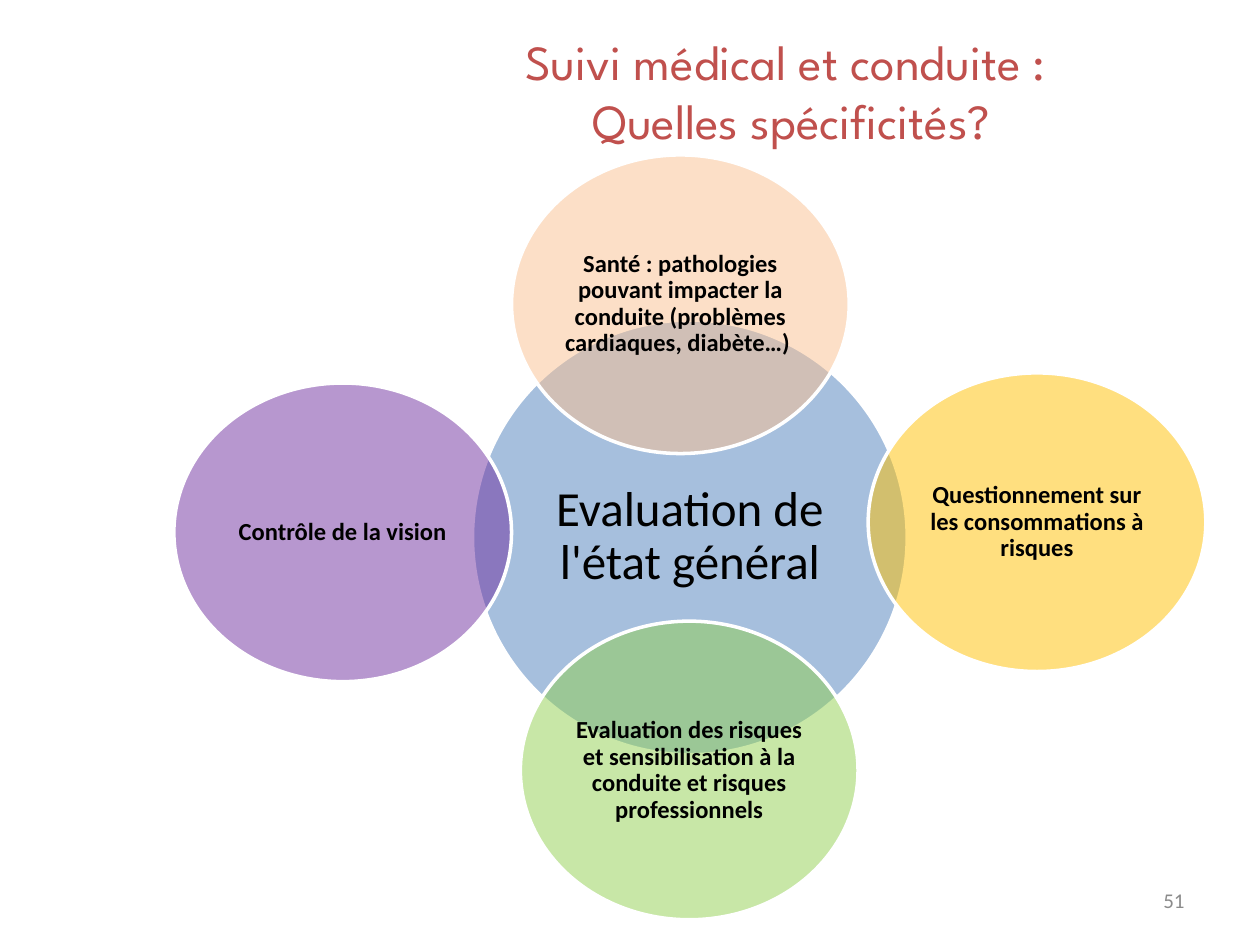
"""Build the slide on medical follow-up and fitness to drive."""
from lxml import etree
from pptx import Presentation
from pptx.dml.color import RGBColor
from pptx.enum import shapes, text
from pptx.oxml import ns
from pptx.util import Inches, Pt

RED = RGBColor(0xC0, 0x50, 0x4D)
GREY = RGBColor(0x8B, 0x8B, 0x8B)
BLACK = RGBColor(0, 0, 0)
WHITE = RGBColor(0xFF, 0xFF, 0xFF)
BLUE = RGBColor(0x4F, 0x81, 0xBD)
PEACH = RGBColor(0xFA, 0xC0, 0x90)
AMBER = RGBColor(0xFF, 0xC0, 0x00)
GREEN = RGBColor(0x92, 0xD0, 0x50)
PURPLE = RGBColor(0x70, 0x30, 0xA0)

TITLE = ["Suivi médical et conduite : ", "Quelles spécificités?"]
PAGE = ["51"]
HUB = ("Evaluation de l'état général", BLUE, 3.75, 2.54)
TOPICS = [
    ("Santé : pathologies pouvant impacter la conduite (problèmes cardiaques, diabète…) ",
     PEACH, 4.06, 1.23),
    ("Questionnement sur les consommations à risques", AMBER, 6.89, 2.96),
    ("Evaluation des risques et sensibilisation à la conduite et risques professionnels",
     GREEN, 4.13, 4.93),
    ("Contrôle de la vision", PURPLE, 1.38, 3.04),
]
HUB_SIZE = (3.45, 3.45)
TOPIC_SIZE = (2.68, 2.37)

TITLE_FONT = {"name": "League Spartan", "size": Pt(28)}
PAGE_FONT = {"name": "Calibri", "size": Pt(12)}
HUB_FONT = {"name": "Calibri", "size": Pt(28)}
TOPIC_FONT = {"name": "Calibri", "size": Pt(14), "bold": True}
CENTER, RIGHT = text.PP_ALIGN.CENTER, text.PP_ALIGN.RIGHT


def write(frame, lines, font, color, align=CENTER, spacing=1.0):
    frame.word_wrap = True
    frame.vertical_anchor = text.MSO_ANCHOR.MIDDLE
    for index, line in enumerate(lines):
        paragraph = frame.add_paragraph() if index else frame.paragraphs[0]
        paragraph.alignment = align
        paragraph.line_spacing = spacing
        run = paragraph.add_run()
        run.text = line
        run.font.color.rgb = color
        for key, value in font.items():
            setattr(run.font, key, value)


def add_circle(slide, topic, size, font, inset):
    label, color, left, top = topic
    circle = slide.shapes.add_shape(
        shapes.MSO_SHAPE.OVAL, *map(Inches, (left, top, *size)))
    circle.shadow.inherit = False
    circle.fill.solid()
    circle.fill.fore_color.rgb = color
    tint = circle.fill._xPr.find(".//" + ns.qn("a:srgbClr"))
    etree.SubElement(tint, ns.qn("a:alpha")).set("val", "50000")
    circle.line.color.rgb = WHITE
    circle.line.width = Pt(2)
    for side in ("left", "top", "right", "bottom"):
        setattr(circle.text_frame, f"margin_{side}", Inches(inset))
    write(circle.text_frame, [label], font, BLACK, spacing=0.9)


def main():
    deck = Presentation()
    deck.slide_width, deck.slide_height = Inches(10), Inches(7.5)
    slide = deck.slides.add_slide(deck.slide_layouts[6])
    page = slide.shapes.add_textbox(*map(Inches, (7.17, 6.95, 2.33, 0.39)))
    write(page.text_frame, PAGE, PAGE_FONT, GREY, RIGHT)
    title = slide.shapes.add_textbox(*map(Inches, (2.57, 0.13, 7.42, 1.18)))
    write(title.text_frame, TITLE, TITLE_FONT, RED)
    add_circle(slide, HUB, HUB_SIZE, HUB_FONT, 0.04)
    for topic in TOPICS:
        add_circle(slide, topic, TOPIC_SIZE, TOPIC_FONT, 0.02)
    deck.save("out.pptx")


if __name__ == "__main__":
    main()
